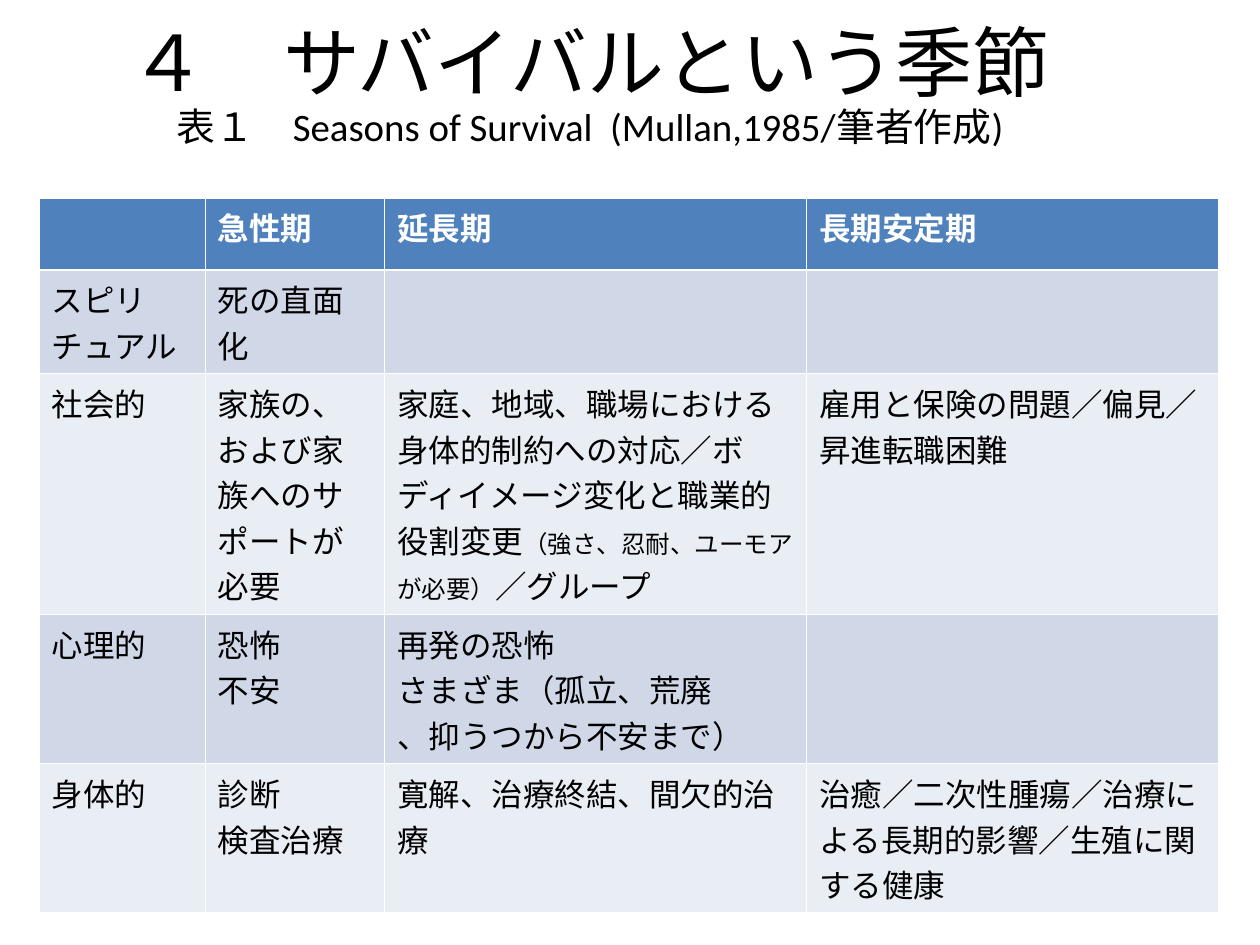
"""Build the slide on the seasons of survival."""
import pptx
import pptx.dml.color
import pptx.enum.text
import pptx.util

Cm = pptx.util.Cm
Pt = pptx.util.Pt

COLORS = {"head": "4F81BD", "dark": "D0D8E8", "light": "E9EDF4",
          "text": "000000", "white": "FFFFFF"}
FONT = "Calibri"
TITLE = [("４　サバイバルという季節", 44),
         ("表１　Seasons of Survival  (Mullan,1985/筆者作成)", 22.2)]
COLS = [3.35, 3.61, 8.51, 8.31]
ROWS = [1.45, 1.98, 4.62, 2.9, 2.82]
CELLS = [
    ["", "急性期", "延長期", "長期安定期"],
    ["スピリチュアル", "死の直面化", "", ""],
    ["社会的", "家族の、および家族へのサポートが必要",
     [("家庭、地域、職場における身体的制約への対応／ボディイメージ変化と職業的役割変更", 18),
      ("（強さ、忍耐、ユーモアが必要）", 14), ("／グループ", 18)],
     "雇用と保険の問題／偏見／昇進転職困難"],
    ["心理的", "恐怖\n不安", "再発の恐怖\nさまざま（孤立、荒廃\n、抑うつから不安まで）", ""],
    ["身体的", "診断\n検査治療", "寛解、治療終結、間欠的治療",
     "治癒／二次性腫瘍／治療による長期的影響／生殖に関する健康"],
]


def paint(name):
    """Return the named colour."""
    return pptx.dml.color.RGBColor.from_string(COLORS[name])


def apply(item, values):
    """Set each attribute of an item from a dict."""
    for key, value in values.items():
        setattr(item, key, value)


def add_run(para, text, size, color="text", bold=False):
    """Add a formatted run to a paragraph."""
    run = para.add_run()
    run.text = text
    apply(run.font, {"name": FONT, "size": Pt(size), "bold": bold})
    run.font.color.rgb = paint(color)


def add_title(slide):
    """Place the title with its smaller second line."""
    title = slide.shapes.title
    apply(title, {"left": Cm(1.4), "top": Cm(0),
                  "width": Cm(20.98), "height": Cm(3.53)})
    frame = title.text_frame
    apply(frame, {"auto_size": pptx.enum.text.MSO_AUTO_SIZE.NONE,
                  "vertical_anchor": pptx.enum.text.MSO_ANCHOR.MIDDLE,
                  "word_wrap": True})
    para = frame.paragraphs[0]
    apply(para, {"alignment": pptx.enum.text.PP_ALIGN.CENTER,
                 "line_spacing": 0.9})
    for place, (text, size) in enumerate(TITLE):
        if place:
            para.add_line_break()
        add_run(para, text, size)


def fill_cell(cell, content, fill, color, bold):
    """Colour a cell and write its paragraphs."""
    cell.fill.solid()
    cell.fill.fore_color.rgb = paint(fill)
    if isinstance(content, str):
        lines = [[(line, 18)] for line in content.split("\n")]
    else:
        lines = [content]
    frame = cell.text_frame
    for place, line in enumerate(lines):
        para = frame.add_paragraph() if place else frame.paragraphs[0]
        for text, size in line:
            if text:
                add_run(para, text, size, color, bold)


def add_grid(slide):
    """Add the table of seasons and aspects."""
    grid = slide.shapes.add_table(len(ROWS), len(COLS), Cm(0.79), Cm(3.99),
                                  Cm(sum(COLS)), Cm(sum(ROWS))).table
    for col, width in zip(grid.columns, COLS):
        col.width = Cm(width)
    for row, height in zip(grid.rows, ROWS):
        row.height = Cm(height)
    for r, line in enumerate(CELLS):
        head = r == 0
        fill = "head" if head else ("light", "dark")[r % 2]
        color = "white" if head else "text"
        for c, content in enumerate(line):
            fill_cell(grid.cell(r, c), content, fill, color, head)


def main():
    """Build and save the deck."""
    deck = pptx.Presentation()
    apply(deck, {"slide_width": Cm(25.4), "slide_height": Cm(19.05)})
    slide = deck.slides.add_slide(deck.slide_layouts[5])
    add_title(slide)
    add_grid(slide)
    deck.save("out.pptx")


if __name__ == "__main__":
    main()
